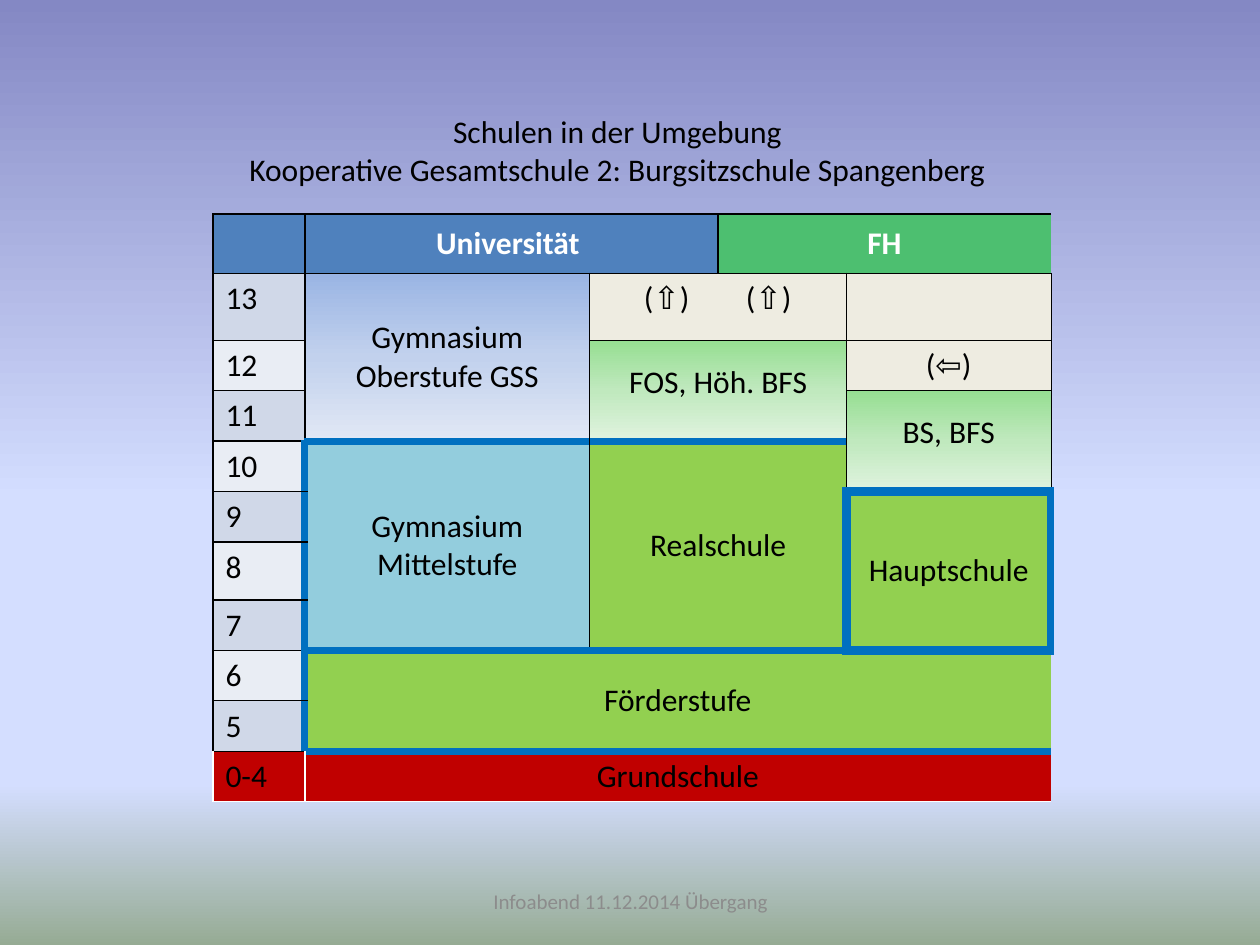
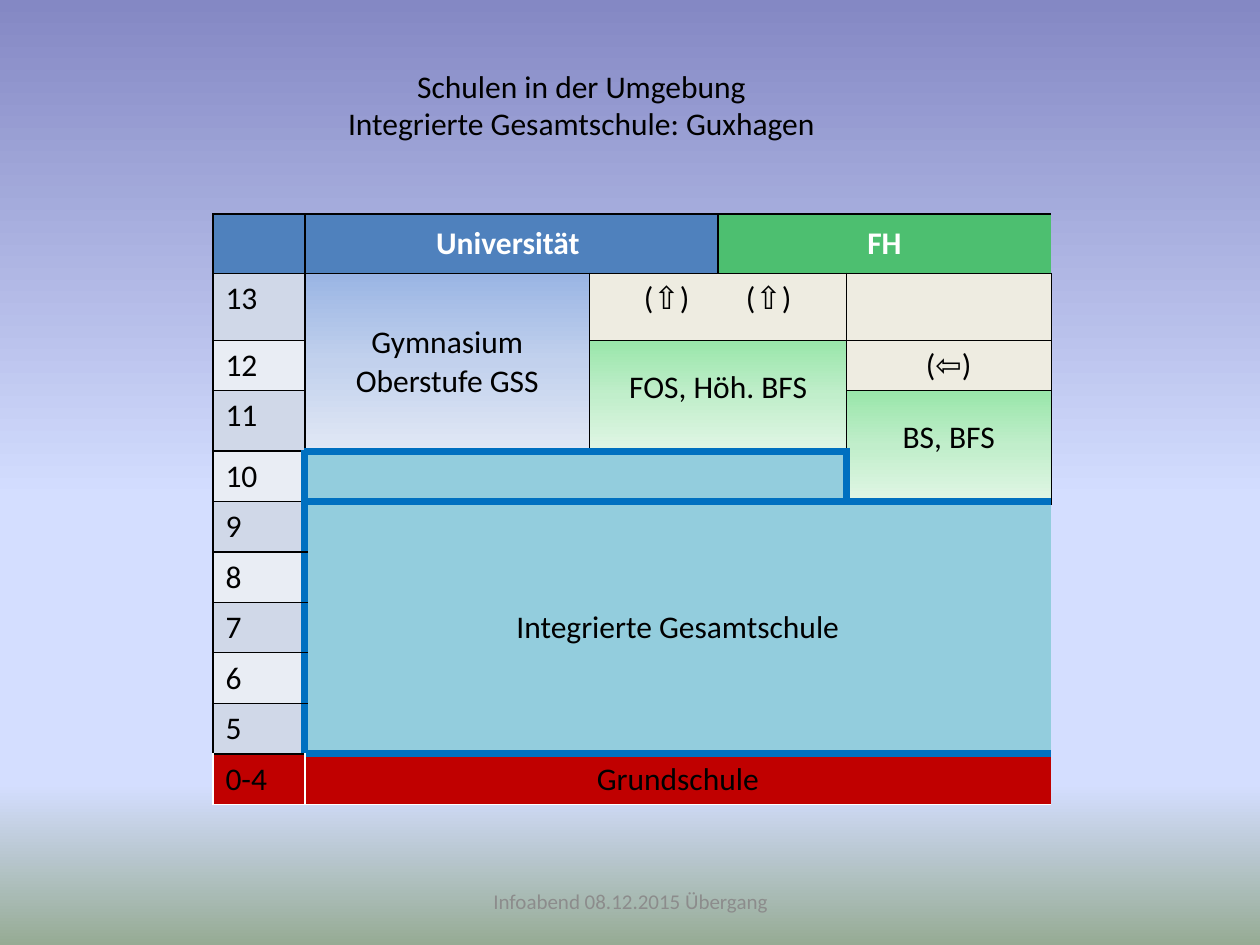
from dataclasses import dataclass
from lxml.etree import SubElement
from pptx import Presentation
from pptx.dml.color import RGBColor
from pptx.enum.text import MSO_ANCHOR, PP_ALIGN
from pptx.oxml import parse_xml
from pptx.oxml.ns import nsdecls, qn
from pptx.util import Inches, Pt


@dataclass(frozen=True)
class Theme:
    font: str = "Calibri"
    body_size: int = 18
    footer_size: int = 12
    text: str = "000000"
    header_text: str = "FFFFFF"
    footer_text: str = "8C8C8C"
    sky: tuple = ((0, "8488C4"), (53, "D4DEFF"), (83, "D4DEFF"), (100, "96AB94"))
    university: str = "4F81BD"
    college: str = "4DBF70"
    year_bands: tuple = ("D0D8E8", "E9EDF4")
    open_way: str = "EEECE1"
    upper_school: tuple = ((0, "9AB5E4"), (50, "C2D1ED"), (100, "E1E8F5"))
    vocational_moss: tuple = ((0, "96DE92"), (50, "C0E9BE"), (100, "E0F3DF"))
    vocational_mint: tuple = ((0, "99E6AA"), (50, "C1EECB"), (100, "E1F6E5"))
    grammar: str = "93CDDD"
    secondary: str = "92D050"
    primary: str = "C00000"


theme = Theme()

# Line styles: colour and width in points
HAIR, FINE, THIN = ("000000", 0.25), ("000000", 0.75), ("000000", 1)
WHITE = ("FFFFFF", 1)
SLIM, WALL, THICK = ("0070C0", 3), ("0070C0", 4.5), ("0070C0", 6)


def paint(fill, owner, color):
    """Fill with one colour, or with gradient stops from top to bottom."""
    if isinstance(color, str):
        fill.solid()
        fill.fore_color.rgb = RGBColor.from_string(color)
        return
    fill.gradient()
    fill.gradient_angle = 270
    stops = owner.find(".//" + qn("a:gsLst"))
    for old_stop in list(stops):
        stops.remove(old_stop)
    for position, value in color:
        stop = SubElement(stops, qn("a:gs"), pos=str(position * 1000))
        SubElement(stop, qn("a:srgbClr"), val=value)


def style_text(frame, size, color, align, bold=False):
    for para in frame.paragraphs:
        para.alignment = align
        for span in para.runs:
            span.font.name = theme.font
            span.font.size = Pt(size)
            span.font.bold = bold
            span.font.color.rgb = RGBColor.from_string(color)


# Blocks: row, column, row span, column span, text, fill, (left, top, right, bottom)
years = [
    (row, 0, 1, 1, str(14 - row), theme.year_bands[(row - 1) % 2],
     (THIN, THIN if row in (1, 4) else FINE, THIN if row < 4 else WALL, FINE))
    for row in range(1, 10)
]
header = [
    (0, 0, 1, 1, "", theme.university, (THIN,) * 4),
    (0, 1, 1, 2, "Universität ", theme.university, (THIN,) * 4),
    (0, 3, 1, 2, "FH", theme.college, (THIN, THIN, THIN, HAIR)),
]
upper_levels = [
    (1, 1, 3, 1, "Gymnasium Oberstufe GSS", theme.upper_school, (THIN, THIN, HAIR, WALL)),
    (1, 2, 1, 2, "(⇧)\t(⇧)", theme.open_way, (HAIR, THIN, FINE, FINE)),
    (1, 4, 1, 1, "", theme.open_way, (FINE, HAIR, HAIR, FINE)),
    (2, 4, 1, 1, "(⇦)", theme.open_way, (FINE, FINE, HAIR, FINE)),
]
primary = [
    (10, 0, 1, 1, "0-4", theme.primary, (WHITE, THIN, WHITE, WHITE)),
    (10, 1, 1, 4, "Grundschule", theme.primary, (WHITE, WALL, WHITE, WHITE)),
]
cooperative = [
    (4, 1, 4, 1, "Gymnasium Mittelstufe", theme.grammar, (WALL, WALL, THIN, FINE)),
    (4, 2, 4, 2, "Realschule", theme.secondary, (THIN, WALL, THICK, THIN)),
    (5, 4, 3, 1, "Hauptschule", theme.secondary, (THICK, THICK, WALL, THIN)),
    (8, 1, 2, 4, "Förderstufe", theme.secondary, (WALL, FINE, WALL, WALL)),
]
integrated = [
    (4, 1, 1, 3, "", theme.grammar, (WALL, WALL, SLIM, None)),
    (5, 1, 5, 4, "Integrierte Gesamtschule", theme.grammar, (WALL, None, WALL, WALL)),
]

pages = [
    dict(title="Schulen in der Umgebung\vKooperative Gesamtschule 2: Burgsitzschule Spangenberg",
         title_at=(1.84, 0.84, 6.12, 0.71), footer="Infoabend 11.12.2014 Übergang",
         tall_rows={0: 0.47, 1: 0.53, 6: 0.46}, vocational=theme.vocational_moss,
         base_line=THICK, lower_levels=cooperative),
    dict(title="Schulen in der Umgebung\vIntegrierte Gesamtschule: Guxhagen",
         title_at=(2.64, 0.48, 3.95, 0.71), footer="Infoabend 08.12.2015 Übergang",
         tall_rows={0: 0.47, 1: 0.53, 3: 0.48}, vocational=theme.vocational_mint,
         base_line=SLIM, lower_levels=integrated),
]
column_widths = [0.73, 2.26, 1.02, 1.02, 1.62]
row_count, row_height = 11, 0.4
raised = ("(⇧)\t(⇧)", "FOS, Höh. BFS", "BS, BFS")

deck = Presentation()
deck.slide_width, deck.slide_height = Inches(10), Inches(7.5)

for content in pages:
    page = deck.slides.add_slide(deck.slide_layouts[6])
    paint(page.background.fill, page._element, theme.sky)

    # Title
    box = page.shapes.add_textbox(*map(Inches, content["title_at"]))
    box.text_frame.word_wrap = False
    box.text_frame.text = content["title"]
    style_text(box.text_frame, theme.body_size, theme.text, PP_ALIGN.CENTER)

    # Footer
    box = page.shapes.add_textbox(Inches(3.42), Inches(6.95), Inches(3.17), Inches(0.4))
    box.text_frame.word_wrap = True
    box.text_frame.vertical_anchor = MSO_ANCHOR.MIDDLE
    box.text_frame.text = content["footer"]
    style_text(box.text_frame, theme.footer_size, theme.footer_text, PP_ALIGN.CENTER)

    # Table grid without a built-in style
    heights = [content["tall_rows"].get(row, row_height) for row in range(row_count)]
    table = page.shapes.add_table(
        row_count, len(column_widths), Inches(1.69), Inches(1.7),
        Inches(sum(column_widths)), Inches(sum(heights))).table
    table._tbl.tblPr.find(qn("a:tableStyleId")).text = "{2D5ABB26-0587-4C30-8999-92F81FD0307C}"
    for column, width in zip(table.columns, column_widths):
        column.width = Inches(width)
    for row, height in zip(table.rows, heights):
        row.height = Inches(height)

    # School blocks
    vocational = [
        (2, 2, 2, 2, "FOS, Höh. BFS", content["vocational"], (HAIR, FINE, FINE, WALL)),
        (3, 4, 2, 1, "BS, BFS", content["vocational"], (FINE, FINE, HAIR, content["base_line"])),
    ]
    blocks = years + header + upper_levels + vocational + content["lower_levels"] + primary
    edges = {}
    for top, left, rows, columns, text, color, (line_l, line_t, line_r, line_b) in blocks:
        cell = table.cell(top, left)
        bottom, right = top + rows - 1, left + columns - 1
        if rows * columns > 1:
            cell.merge(table.cell(bottom, right))
        paint(cell.fill, cell._tc, color)
        cell.text_frame.text = text
        cell.vertical_anchor = MSO_ANCHOR.TOP if left == 0 else MSO_ANCHOR.MIDDLE
        if text in raised:
            cell.margin_bottom = Inches(0.18)
        align = PP_ALIGN.LEFT if left == 0 else PP_ALIGN.CENTER
        if "\t" in text:
            align = PP_ALIGN.LEFT
            cell.margin_left = Inches(0.43)
            properties = cell.text_frame.paragraphs[0]._p.get_or_add_pPr()
            tabs = SubElement(properties, qn("a:tabLst"))
            SubElement(tabs, qn("a:tab"), pos=str(Inches(0.81)), algn="l")
        style_text(cell.text_frame, theme.body_size,
                   theme.header_text if top == 0 else theme.text, align, bold=top == 0)

        # Neighbours share an edge; the later block decides its line
        for row in range(top, bottom + 1):
            if line_l:
                edges[row, left, "L"] = edges[row, left - 1, "R"] = line_l
            if line_r:
                edges[row, right, "R"] = edges[row, right + 1, "L"] = line_r
        for column in range(left, right + 1):
            if line_t:
                edges[top, column, "T"] = edges[top - 1, column, "B"] = line_t
            if line_b:
                edges[bottom, column, "B"] = edges[bottom + 1, column, "T"] = line_b

    # Cell borders
    for row in range(row_count):
        for column in range(len(column_widths)):
            properties = table.cell(row, column)._tc.get_or_add_tcPr()
            sides = [side for side in "LRTB" if (row, column, side) in edges]
            for index, side in enumerate(sides):
                color, width = edges[row, column, side]
                properties.insert(index, parse_xml(
                    f'<a:ln{side} {nsdecls("a")} w="{Pt(width)}"><a:solidFill>'
                    f'<a:srgbClr val="{color}"/></a:solidFill></a:ln{side}>'))

deck.save("out.pptx")
